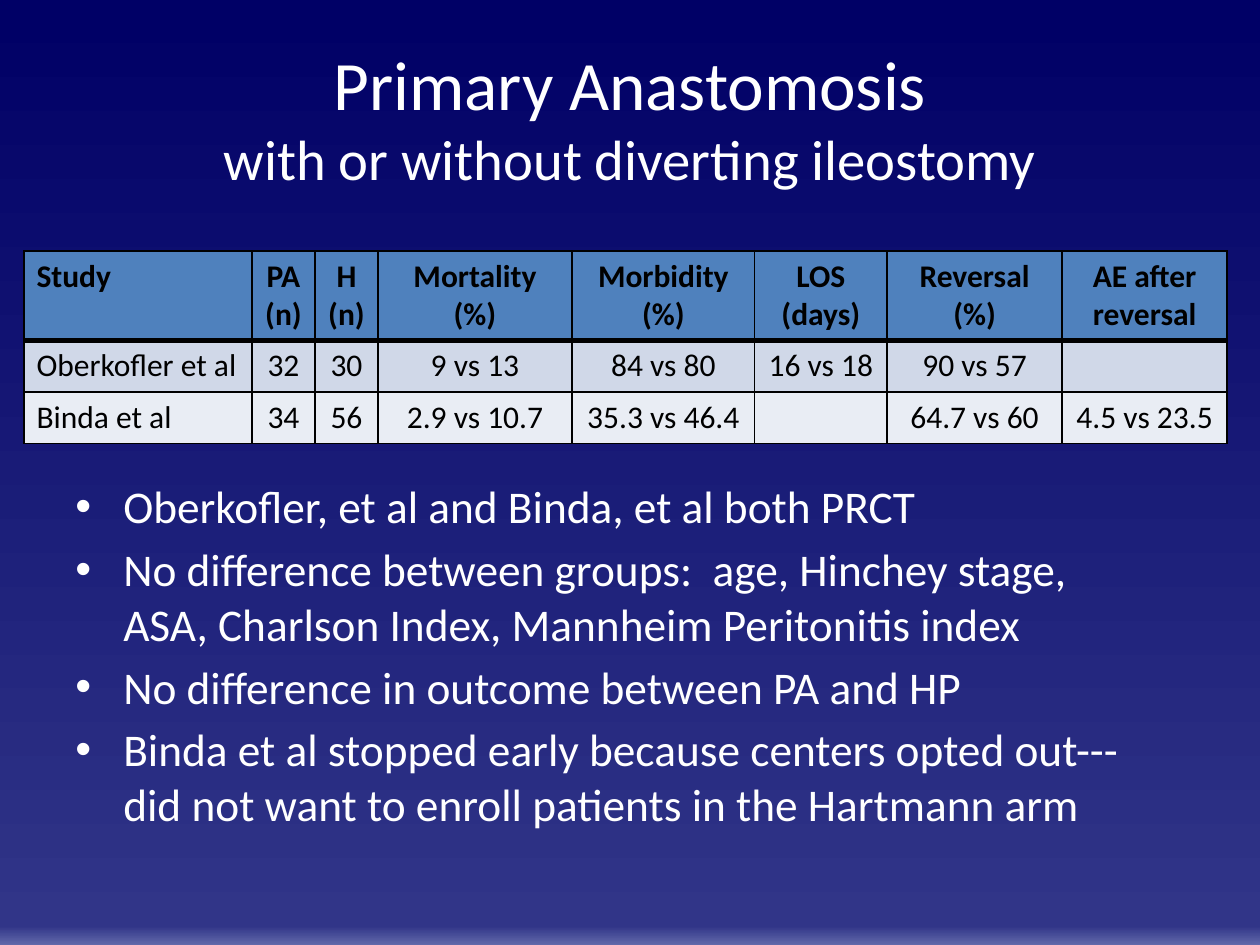
"""Build the slide comparing trials of primary anastomosis."""
from copy import deepcopy

from lxml import etree
from pptx import Presentation
from pptx import util as u
from pptx.dml.color import RGBColor
from pptx.enum import text
from pptx.oxml.ns import qn

COLORS = {
    "top": "000066", "middle": "313588", "bottom": "6169AA",
    "white": "FFFFFF", "black": "000000",
    "header": "4F81BD", "odd": "D0D8E8", "even": "E9EDF4",
}
FONT = "Calibri"


def format_runs(paragraph, size, color, bold=False):
    for run in paragraph.runs:
        run.font.name = FONT
        run.font.size = u.Pt(size)
        run.font.bold = bold
        run.font.color.rgb = RGBColor.from_string(COLORS[color])


def add_border(cell, side, width):
    line = etree.SubElement(cell._tc.get_or_add_tcPr(), qn(f"a:ln{side}"), w=str(u.Pt(width)))
    fill = etree.SubElement(line, qn("a:solidFill"))
    etree.SubElement(fill, qn("a:srgbClr"), val=COLORS["black"])


presentation = Presentation()
presentation.slide_width = u.Inches(10)
presentation.slide_height = u.Inches(7.5)
slide = presentation.slides.add_slide(presentation.slide_layouts[6])

background = slide.background.fill
background.gradient()
background.gradient_angle = 270
stop_list = slide._element.find(".//" + qn("a:gsLst"))
stop_list.append(deepcopy(stop_list[-1]))
stops = [(0.01, "top"), (0.98, "middle"), (1, "bottom")]
for stop, (position, color) in zip(background.gradient_stops, stops):
    stop.position = position
    stop.color.rgb = RGBColor.from_string(COLORS[color])

title = slide.shapes.add_textbox(u.Inches(0.5), u.Inches(0.3), u.Inches(9), u.Inches(1.25))
title.text_frame.word_wrap = True
title.text_frame.vertical_anchor = text.MSO_ANCHOR.MIDDLE
paragraph = title.text_frame.paragraphs[0]
paragraph.text = "Primary Anastomosis\vwith or without diverting ileostomy"
paragraph.alignment = text.PP_ALIGN.CENTER
format_runs(paragraph, 39.6, "white")
paragraph.runs[1].font.size = u.Pt(32.4)

rows = [
    ["Study", "PA\n(n)", "H\n(n)", "Mortality\n(%)", "Morbidity\n(%)", "LOS\n(days)",
     "Reversal\n(%)", "AE after reversal"],
    ["Oberkofler et al", "32", "30", "9 vs 13", "84 vs 80", "16 vs 18", "90 vs 57", ""],
    ["Binda et al", "34", "56", "2.9 vs 10.7", "35.3 vs 46.4", "", "64.7 vs 60", "4.5 vs 23.5"],
]
column_widths = [1.81, 0.5, 0.5, 1.54, 1.45, 1.05, 1.39, 1.31]
row_heights = [0.71, 0.41, 0.41]
row_fills = ["header", "odd", "even"]
table = slide.shapes.add_table(
    len(rows), len(column_widths), u.Inches(0.19), u.Inches(1.99),
    u.Inches(sum(column_widths)), u.Inches(sum(row_heights))).table
for column, width in zip(table.columns, column_widths):
    column.width = u.Inches(width)
for row_index, values in enumerate(rows):
    table.rows[row_index].height = u.Inches(row_heights[row_index])
    for column_index, value in enumerate(values):
        cell = table.cell(row_index, column_index)
        cell.text_frame.text = value
        for paragraph in cell.text_frame.paragraphs:
            if column_index > 0:
                paragraph.alignment = text.PP_ALIGN.CENTER
            format_runs(paragraph, 18, "black", bold=row_index == 0)
        for side in "LRTB":
            under_header = (row_index, side) in [(0, "B"), (1, "T")]
            add_border(cell, side, 3 if under_header else 1)
        cell.fill.solid()
        cell.fill.fore_color.rgb = RGBColor.from_string(COLORS[row_fills[row_index]])

findings = [
    "Oberkofler, et al and Binda, et al both PRCT",
    "No difference between groups:  age, Hinchey stage, ASA, Charlson Index, "
    "Mannheim Peritonitis index",
    "No difference in outcome between PA and HP",
    "Binda et al stopped early because centers opted out---did not want to enroll "
    "patients in the Hartmann arm",
]
body = slide.shapes.add_textbox(u.Inches(0.5), u.Inches(3.75), u.Inches(8.58), u.Inches(3))
body.text_frame.word_wrap = True
body.text_frame.text = "\n".join(findings)
for paragraph in body.text_frame.paragraphs:
    paragraph.space_before = u.Pt(4.8)
    format_runs(paragraph, 25.9, "white")
    properties = paragraph._p.get_or_add_pPr()
    properties.set("marL", str(u.Inches(0.38)))
    properties.set("indent", str(u.Inches(-0.38)))
    etree.SubElement(properties, qn("a:buFont"), typeface="Arial")
    etree.SubElement(properties, qn("a:buChar"), char="•")

presentation.save("out.pptx")
